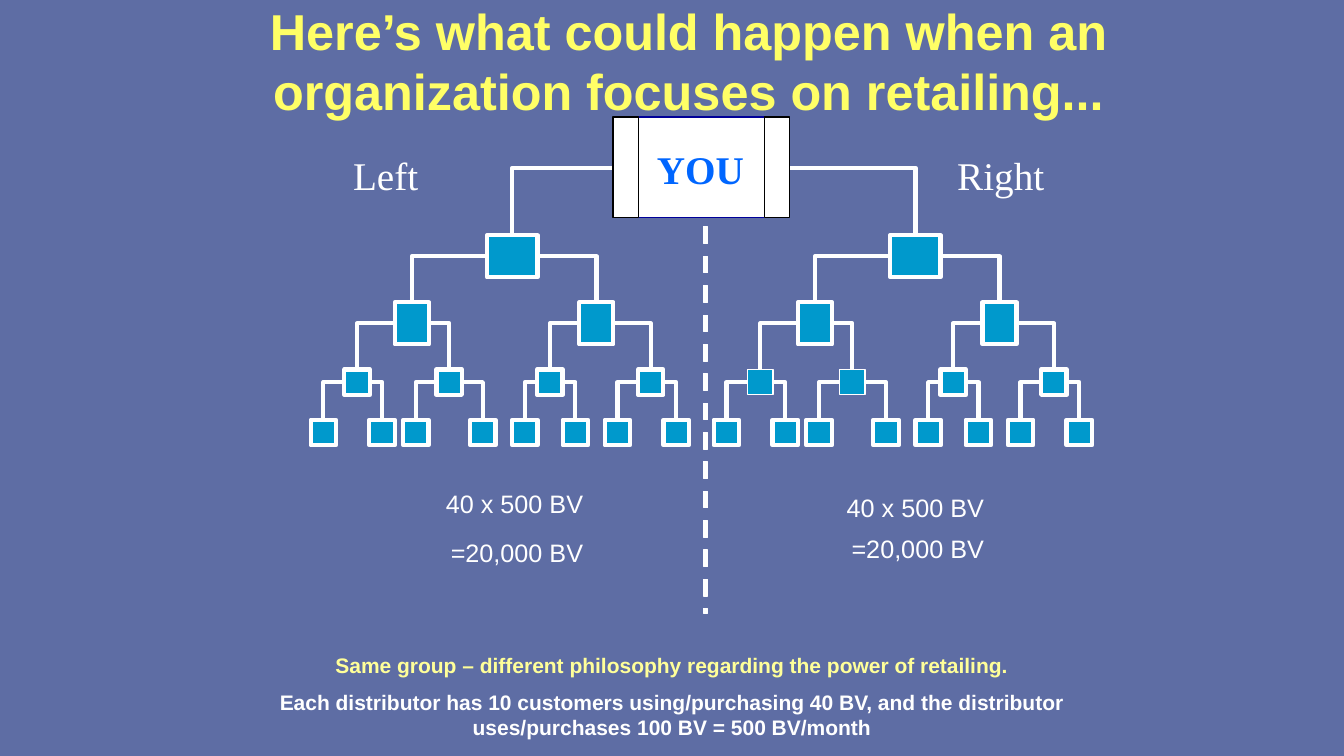
"""Build the slide showing a two-legged organization that focuses on retailing."""
from pptx import Presentation
from pptx.dml.color import RGBColor
from pptx.enum.shapes import MSO_SHAPE as Shape
from pptx.enum.text import MSO_ANCHOR as Anchor, MSO_AUTO_SIZE as AutoSize, PP_ALIGN as Align
from pptx.util import Cm, Pt

COLORS = {
    "background": "5E6DA4", "white": "FFFFFF", "black": "000000", "member": "0099CC",
    "navy": "000099", "you": "0066FF", "title": "FFFF66", "remark": "FFFF99",
}
RGB = {name: RGBColor.from_string(value) for name, value in COLORS.items()}

presentation = Presentation()
presentation.slide_width, presentation.slide_height = Cm(33.87), Cm(19.05)
slide = presentation.slides.add_slide(presentation.slide_layouts[5])
slide.background.fill.solid()
slide.background.fill.fore_color.rgb = RGB["background"]
shapes = slide.shapes


def add_box(left, top, width, height, fill, line, weight):
    box = shapes.add_shape(Shape.RECTANGLE, Cm(left), Cm(top), Cm(width), Cm(height))
    box.shadow.inherit = False
    box.fill.solid()
    box.fill.fore_color.rgb = RGB[fill]
    box.line.color.rgb = RGB[line]
    box.line.width = Pt(weight)


def style(paragraph, text, size, color, font="Arial", bold=False, align=Align.CENTER):
    paragraph.text = text
    paragraph.alignment = align
    paragraph.font.name = font
    paragraph.font.size = Pt(size)
    paragraph.font.bold = bold
    paragraph.font.color.rgb = RGB[color]


title = shapes.title
title.left, title.top, title.width, title.height = Cm(5.93), Cm(0), Cm(22.86), Cm(3.05)
heading = title.text_frame
heading.margin_left = heading.margin_right = heading.margin_top = heading.margin_bottom = 0
heading.auto_size = AutoSize.NONE
heading.vertical_anchor = Anchor.TOP
heading.word_wrap = True
style(heading.paragraphs[0],
      "Here’s what could happen when an organization focuses on retailing...",
      36, "title", bold=True)

levels = [
    (5.93, 1.27, 1.06, [12.91]),
    (7.62, 0.86, 1.06, [10.38, 15.03]),
    (9.31, 0.64, 0.64, [9, 11.32, 13.86, 16.4]),
    (10.58, 0.64, 0.64, [8.15, 9.63, 10.48, 12.17, 13.23, 14.5, 15.56, 17.04]),
]
leg_distance = 10.16
for leg, you_edge in enumerate((15.44, 19.89)):
    shift = leg * leg_distance
    for depth, (top, width, height, centers) in enumerate(levels):
        for position, center in enumerate(centers):
            if depth == 0:
                link_x, link_y = you_edge, 4.23
            else:
                parent_top, parent_width, parent_height, parents = levels[depth - 1]
                side = 1 if position % 2 else -1
                link_x = parents[position // 2] + shift + side * parent_width / 2
                link_y = parent_top + parent_height / 2
            x = center + shift
            route = shapes.build_freeform(Cm(link_x), Cm(link_y))
            route.add_line_segments([(Cm(x), Cm(link_y)), (Cm(x), Cm(top))], close=False)
            link = route.convert_to_shape()
            link.shadow.inherit = False
            link.fill.background()
            link.line.color.rgb = RGB["white"]
            link.line.width = Pt(3)
    for depth, (top, width, height, centers) in enumerate(levels):
        for position, center in enumerate(centers):
            weight = 1 if leg == 1 and depth == 2 and position < 2 else 3
            add_box(center + shift - width / 2, top, width, height, "member", "white", weight)

dash_count = 14
for dash in range(dash_count):
    dash_height = 0.11 if dash == dash_count - 1 else 0.42
    add_box(17.73, 5.72 + dash * 0.74, 0.11, dash_height, "white", "white", 0.75)

add_box(16.09, 2.95, 3.18, 2.54, "white", "navy", 1)
for edge_left in (15.45, 19.26):
    add_box(edge_left, 2.95, 0.64, 2.54, "white", "black", 1)

label_width = 2.6
labels = [
    ("YOU", 17.65, 3.66, "you", True),
    ("Left", 9.72, 3.81, "white", False),
    ("Right", 25.22, 3.81, "white", False),
]
for text, center, top, color, bold in labels:
    label = shapes.add_textbox(
        Cm(center - label_width / 2), Cm(top), Cm(label_width), Cm(1.19)).text_frame
    label.margin_left = label.margin_right = label.margin_top = label.margin_bottom = 0
    label.word_wrap = False
    label.auto_size = AutoSize.SHAPE_TO_FIT_TEXT
    style(label.paragraphs[0], text, 28, color, "Times New Roman", bold)

remarks = shapes.add_textbox(Cm(5.08), Cm(16.33), Cm(23.71), Cm(2.49)).text_frame
remarks.word_wrap = True
style(remarks.paragraphs[0],
      "Same group – different philosophy regarding the power of retailing.",
      15, "remark", bold=True)
explanation = remarks.add_paragraph()
style(explanation,
      "Each distributor has 10 customers using/purchasing 40 BV, and the distributor "
      "uses/purchases 100 BV = 500 BV/month",
      15, "white", bold=True)
explanation.space_before = Pt(8)

volumes = [
    (10.77, 12.24, (4.18, 4.18), (1.24, 1.04)),
    (20.9, 12.34, (4.15, 4.62), (1.04, 1.04)),
]
for left, top, widths, heights in volumes:
    volume = shapes.add_table(2, 2, Cm(left), Cm(top), Cm(sum(widths)), Cm(sum(heights))).table
    volume.first_row = volume.horz_banding = False
    volume._tbl.tblPr[0].text = "{2D5ABB26-0587-4C30-8999-92F81FD0307C}"
    for column, width in zip(volume.columns, widths):
        column.width = Cm(width)
    for row, height in zip(volume.rows, heights):
        row.height = Cm(height)
    for cell in volume.iter_cells():
        cell.fill.background()
    for row, text in enumerate(("40 x 500 BV", "=20,000 BV")):
        style(volume.cell(row, 0).text_frame.paragraphs[0], text, 18, "white", align=Align.RIGHT)

presentation.save("out.pptx")
